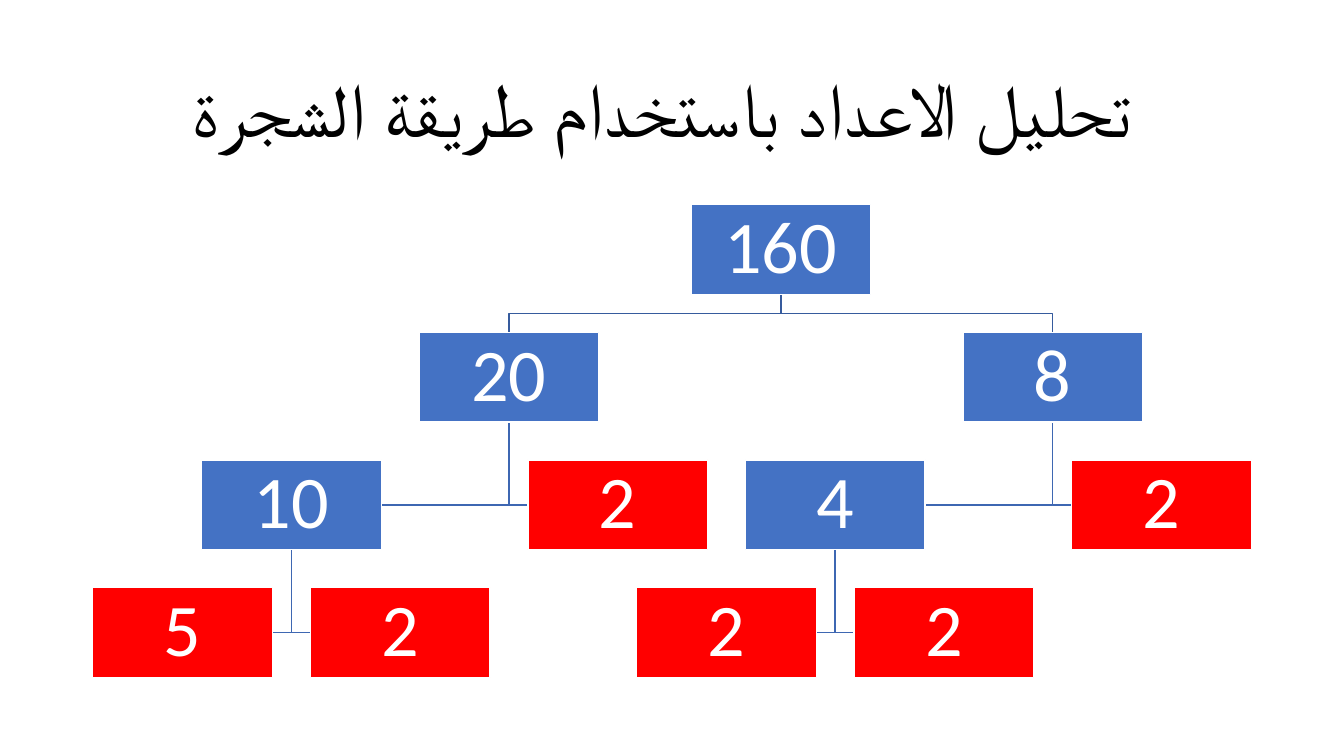
import pptx
import pptx.util
import pptx.dml.color
import pptx.enum.shapes
import pptx.enum.text

Pt = pptx.util.Pt
RGBColor = pptx.dml.color.RGBColor

BLACK = RGBColor(0x00, 0x00, 0x00)
WHITE = RGBColor(0xFF, 0xFF, 0xFF)
COMPOSITE_BLUE = RGBColor(0x44, 0x72, 0xC4)
PRIME_RED = RGBColor(0xFF, 0x00, 0x00)
ROOT_LINK = RGBColor(0x36, 0x5B, 0x9D)
FACTOR_LINK = RGBColor(0x3E, 0x67, 0xB2)

NODE_WIDTH, NODE_HEIGHT = 128.4, 64.2
GAP = 0.42 * NODE_HEIGHT
COLUMN_STEP = (NODE_WIDTH + GAP) / 2
LEVEL_STEP = NODE_HEIGHT + GAP

# Each number: value, column, factors
FACTOR_TREE = ("160", 5.5, [
    ("20", 3, [
        ("10", 1, [("5", 0, []), ("2", 2, [])]),
        ("2", 4, []),
    ]),
    ("8", 8, [
        ("4", 6, [("2", 5, []), ("2", 7, [])]),
        ("2", 9, []),
    ]),
])


def write_text(frame, text, size, color, inset_x, inset_y):
    """Centre one paragraph of text in the frame."""
    frame_format = {
        "word_wrap": True,
        "vertical_anchor": pptx.enum.text.MSO_ANCHOR.MIDDLE,
        "margin_left": Pt(inset_x), "margin_right": Pt(inset_x),
        "margin_top": Pt(inset_y), "margin_bottom": Pt(inset_y),
    }
    for name, value in frame_format.items():
        setattr(frame, name, value)
    paragraph = frame.paragraphs[0]
    paragraph.alignment = pptx.enum.text.PP_ALIGN.CENTER
    paragraph.line_spacing = 0.9
    run = paragraph.add_run()
    run.text = text
    for name, value in {"name": "Calibri", "size": Pt(size)}.items():
        setattr(run.font, name, value)
    run.font.color.rgb = color


def add_title(slide, left, top, width, height):
    title = slide.shapes.add_textbox(Pt(left), Pt(top), Pt(width), Pt(height))
    write_text(title.text_frame, "تحليل الاعداد باستخدام طريقة الشجرة ",
               54, BLACK, 7.2, 3.6)


def add_link(slide, points, color):
    """Draw an open bent line through the points."""
    start, *rest = [(Pt(x), Pt(y)) for x, y in points]
    builder = slide.shapes.build_freeform(*start)
    builder.add_line_segments(rest, close=False)
    link = builder.convert_to_shape()
    link.shadow.inherit = False
    link.fill.background()
    link.line.color.rgb = color
    link.line.width = Pt(1)


def add_number(slide, value, left, top, fill):
    box = slide.shapes.add_shape(
        pptx.enum.shapes.MSO_SHAPE.RECTANGLE,
        Pt(left), Pt(top), Pt(NODE_WIDTH), Pt(NODE_HEIGHT))
    box.shadow.inherit = False
    box.fill.solid()
    box.fill.fore_color.rgb = fill
    box.line.color.rgb = WHITE
    box.line.width = Pt(1)
    write_text(box.text_frame, value, 53, WHITE, 2.9, 2.9)


def add_factor_tree(slide, number, left, top, level=0):
    """Draw a number, its factors below it, and the links between them."""
    value, column, factors = number
    node_left = left + column * COLUMN_STEP
    node_top = top + level * LEVEL_STEP
    center = node_left + NODE_WIDTH / 2
    bottom = node_top + NODE_HEIGHT
    for factor in factors:
        factor_left = left + factor[1] * COLUMN_STEP
        if level == 0:
            factor_center = factor_left + NODE_WIDTH / 2
            fork = bottom + GAP / 2
            bends = [(center, fork), (factor_center, fork),
                     (factor_center, bottom + GAP)]
        else:
            middle = bottom + GAP + NODE_HEIGHT / 2
            side = factor_left if factor_left > center else factor_left + NODE_WIDTH
            bends = [(center, middle), (side, middle)]
        add_link(slide, [(center, bottom)] + bends,
                 FACTOR_LINK if level else ROOT_LINK)
        add_factor_tree(slide, factor, left, top, level + 1)
    add_number(slide, value, node_left, node_top,
               COMPOSITE_BLUE if factors else PRIME_RED)


def main():
    deck = pptx.Presentation()
    deck.slide_width, deck.slide_height = Pt(960), Pt(540)
    slide = deck.slides.add_slide(deck.slide_layouts[6])
    add_title(slide, 66, 28.75, 828, 104.4)
    add_factor_tree(slide, FACTOR_TREE, 66.3, 146.2)
    deck.save("out.pptx")


if __name__ == "__main__":
    main()
